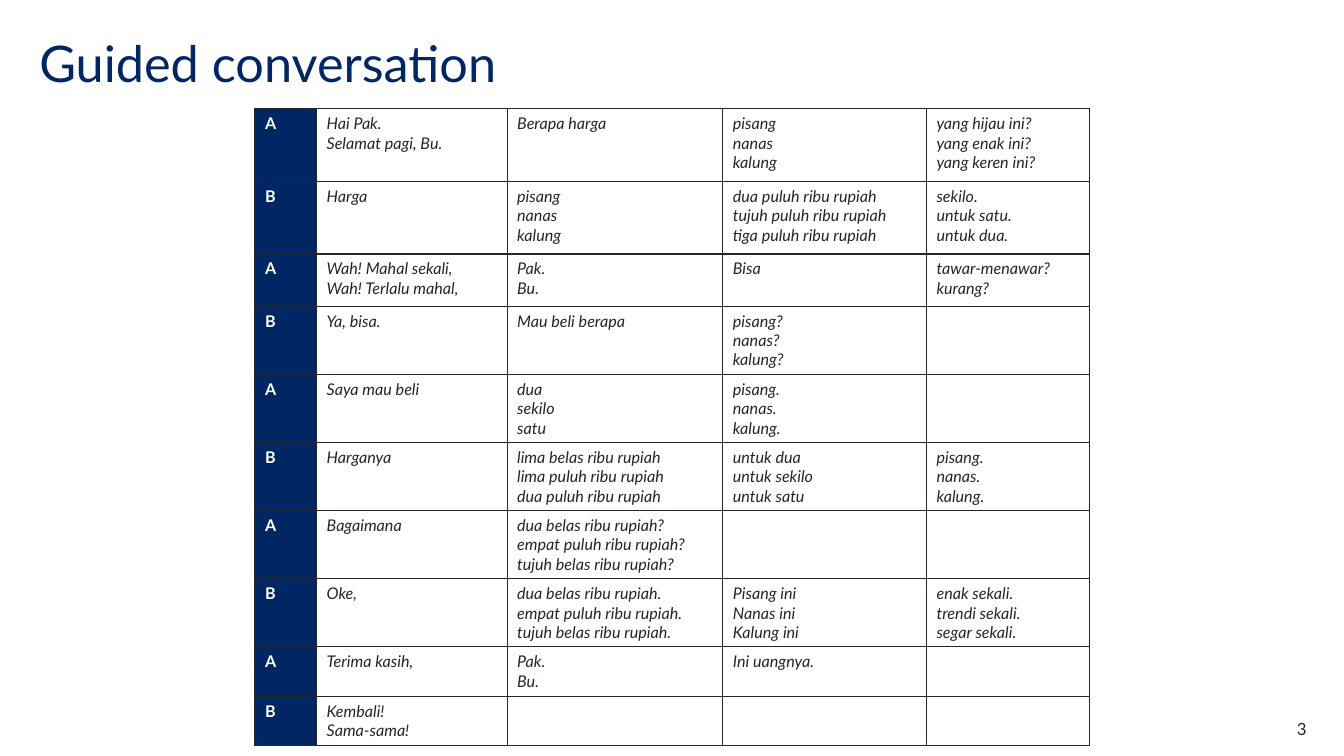
"""Build the guided conversation slide with its table of phrases."""
from lxml import etree
from pptx import Presentation, util as u
from pptx.dml.color import RGBColor
from pptx.enum import text
from pptx.oxml import ns

ROWS = [
    ("A", "Hai Pak.|Selamat pagi, Bu.", "Berapa harga", "pisang|nanas|kalung",
     "yang hijau ini?|yang enak ini?|yang keren ini?"),
    ("B", "Harga", "pisang|nanas|kalung",
     "dua puluh ribu rupiah|tujuh puluh ribu rupiah|tiga puluh ribu rupiah",
     "sekilo.|untuk satu.|untuk dua."),
    ("A", "Wah! Mahal sekali,|Wah! Terlalu mahal,", "Pak.|Bu.", "Bisa",
     "tawar-menawar?|kurang?"),
    ("B", "Ya, bisa.", "Mau beli berapa", "pisang?|nanas?|kalung?", ""),
    ("A", "Saya mau beli", "dua|sekilo|satu", "pisang.|nanas.|kalung.", ""),
    ("B", "Harganya",
     "lima belas ribu rupiah|lima puluh ribu rupiah|dua puluh ribu rupiah",
     "untuk dua|untuk sekilo|untuk satu", "pisang.|nanas.|kalung."),
    ("A", "Bagaimana",
     "dua belas ribu rupiah?|empat puluh ribu rupiah?|tujuh belas ribu rupiah?",
     "", ""),
    ("B", "Oke,",
     "dua belas ribu rupiah.|empat puluh ribu rupiah.|tujuh belas ribu rupiah.",
     "Pisang ini|Nanas ini|Kalung ini",
     "enak sekali.|trendi sekali.|segar sekali."),
    ("A", "Terima kasih,", "Pak.|Bu.", "Ini uangnya.", ""),
    ("B", "Kembali!|Sama-sama!", "", "", ""),
]
COLS = [0.61, 1.89, 2.14, 2.02, 1.62]
HIGHS = [0.72, 0.72, 0.52] + [0.67] * 5 + [0.49] * 2


def color(code):
    return RGBColor.from_string(code)


class Deck:
    navy, ink, white = "002664", "22272B", "FFFFFF"
    face = "Lato"

    def __init__(self):
        self.show = Presentation()
        self.show.slide_width = u.Inches(13.33)
        self.show.slide_height = u.Inches(7.5)
        self.slide = self.show.slides.add_slide(self.show.slide_layouts[5])

    def run(self, para, words, size, code, bold=False, slant=False):
        run = para.add_run()
        run.text = words
        font = run.font
        font.name, font.size = self.face, u.Pt(size)
        font.bold, font.italic = bold, slant
        font.color.rgb = color(code)

    def frame(self, shape, words, size, code, align):
        body = shape.text_frame
        body.margin_left = body.margin_right = 0
        body.margin_top = body.margin_bottom = 0
        body.word_wrap = True
        body.auto_size = text.MSO_AUTO_SIZE.NONE
        body.vertical_anchor = text.MSO_ANCHOR.TOP
        para = body.paragraphs[0]
        para.alignment = align
        self.run(para, words, size, code)
        return para

    def title(self, words, *box):
        shape = self.slide.shapes.title
        shape.left, shape.top, shape.width, shape.height = map(u.Inches, box)
        para = self.frame(shape, words, 36, self.navy, text.PP_ALIGN.LEFT)
        para.line_spacing = 0.9

    def number(self, words, *box):
        shape = self.slide.shapes.add_textbox(*map(u.Inches, box))
        self.frame(shape, words, 12, self.ink, text.PP_ALIGN.RIGHT)

    def border(self, cell):
        props = cell._tc.get_or_add_tcPr()
        for place, side in enumerate("LRTB"):
            line = etree.Element(ns.qn("a:ln" + side), w=str(u.Pt(1)))
            fill = etree.SubElement(line, ns.qn("a:solidFill"))
            etree.SubElement(fill, ns.qn("a:srgbClr"), val=self.ink)
            props.insert(place, line)

    def cell(self, cell, words, head):
        if head:
            cell.fill.solid()
            cell.fill.fore_color.rgb = color(self.navy)
        else:
            cell.fill.background()
        self.border(cell)
        body = cell.text_frame
        for place, line in enumerate(words.split("|") if words else []):
            para = body.add_paragraph() if place else body.paragraphs[0]
            self.run(para, line, 11.5, self.white if head else self.ink,
                     bold=head, slant=not head)

    def table(self, rows, cols, highs, left, top):
        grid = self.slide.shapes.add_table(
            len(rows), len(cols), u.Inches(left), u.Inches(top),
            u.Inches(sum(cols)), u.Inches(sum(highs))).table
        grid.first_row = grid.horz_banding = False
        for col, wide in zip(grid.columns, cols):
            col.width = u.Inches(wide)
        for row, high, line in zip(grid.rows, highs, rows):
            row.height = u.Inches(high)
            for place, words in enumerate(line):
                self.cell(row.cells[place], words, place == 0)


def main():
    deck = Deck()
    deck.title("Guided conversation", 0.39, 0.39, 11.02, 1.1)
    deck.table(ROWS, COLS, HIGHS, 2.53, 1.08)
    deck.number("3", 12.17, 7.13, 0.79, 0.2)
    deck.show.save("out.pptx")


if __name__ == "__main__":
    main()
